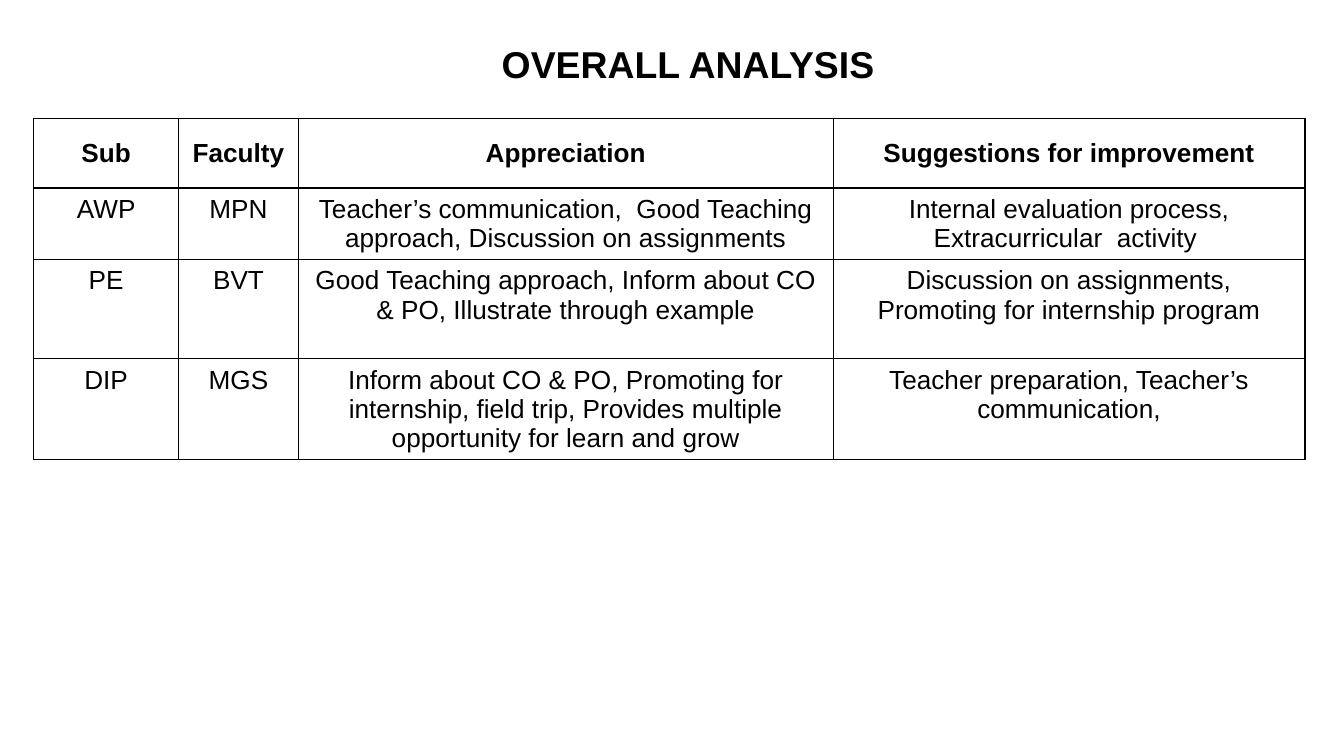
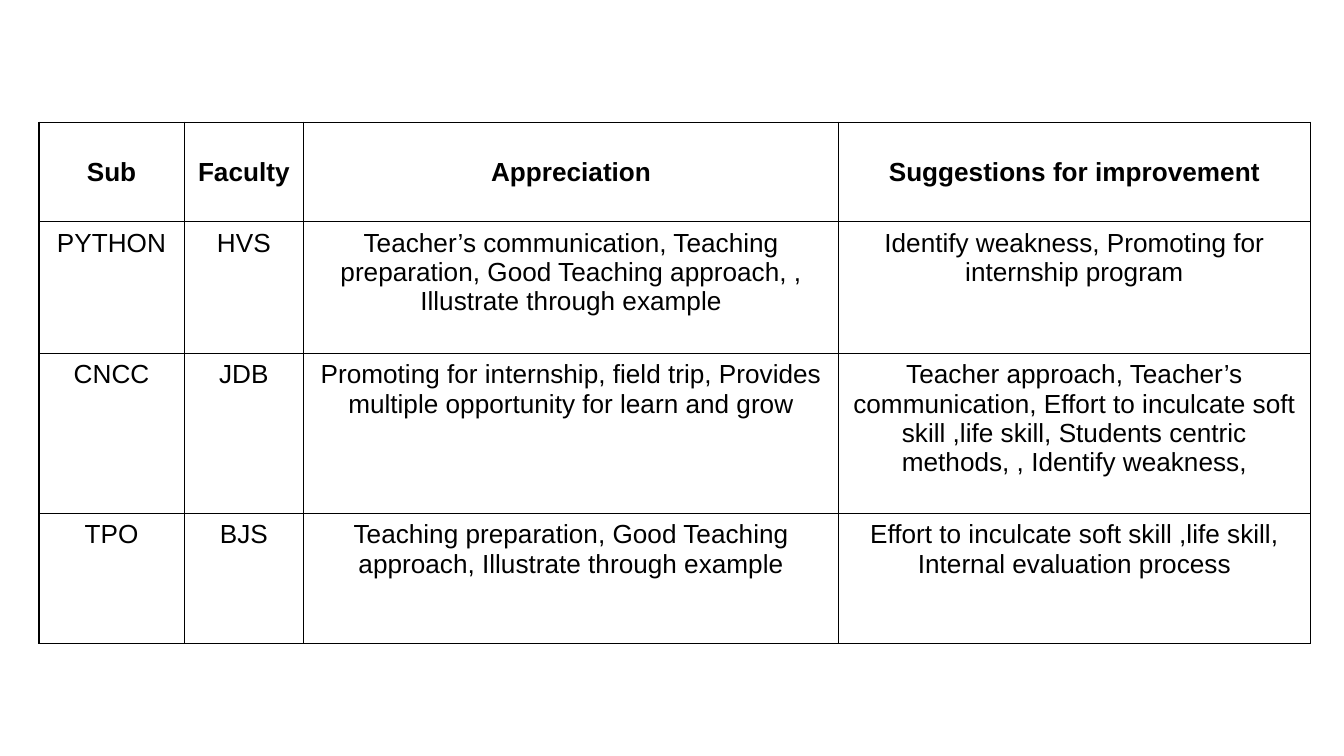
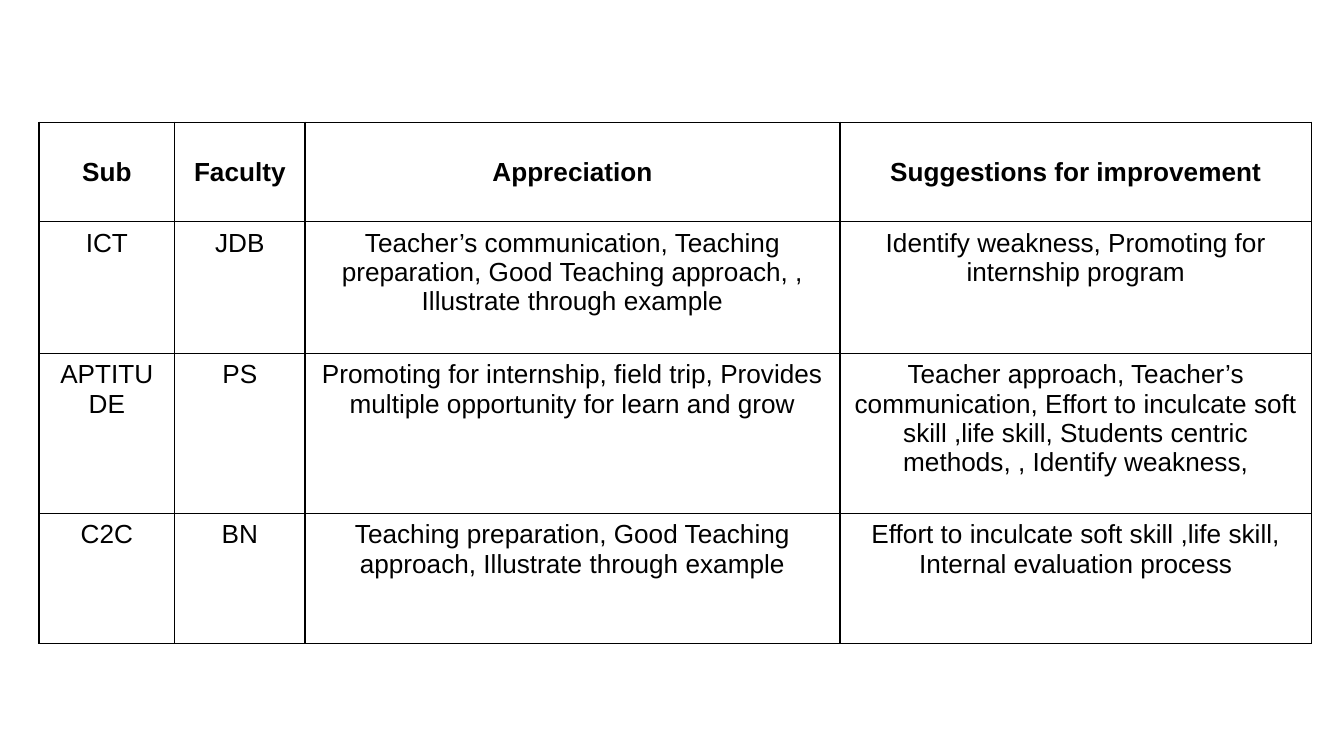
from lxml.etree import SubElement
from pptx import Presentation
from pptx.dml.color import RGBColor
from pptx.enum.text import MSO_ANCHOR as Anchor, PP_ALIGN as Align
from pptx.oxml.ns import qn
from pptx.util import Inches, Pt

BLACK = RGBColor(0x00, 0x00, 0x00)
WHITE = RGBColor(0xFF, 0xFF, 0xFF)
FONT = "Arial"
TITLE_SIZE, TABLE_SIZE = Pt(20), Pt(14)
BORDER_WIDTH = Pt(0.75)

HEADINGS = ("Sub", "Faculty", "Appreciation", "Suggestions for improvement")
REMARK_COLUMNS = (3.98, 3.51)

FIRST_ROWS = [
    ("AWP", "MPN",
     "Teacher’s communication,  Good Teaching approach, Discussion on assignments",
     "Internal evaluation process, Extracurricular  activity "),
    ("PE", "BVT",
     "Good Teaching approach, Inform about CO & PO, Illustrate through example",
     "Discussion on assignments, Promoting for internship program"),
    ("DIP", "MGS",
     "Inform about CO & PO, Promoting for internship, field trip, "
     "Provides multiple opportunity for learn and grow",
     "Teacher preparation, Teacher’s communication,"),
]

# Slides 2 and 3 give the same remarks for different subjects.
SHARED_REMARKS = [
    ("Teacher’s communication, Teaching preparation, Good Teaching approach, , "
     "Illustrate through example",
     "Identify weakness, Promoting for internship program"),
    ("Promoting for internship, field trip, Provides multiple opportunity for learn and grow",
     "Teacher approach, Teacher’s communication, Effort to inculcate soft skill ,life skill, "
     "Students centric methods, , Identify weakness,"),
    ("Teaching preparation, Good Teaching approach, Illustrate through example",
     "Effort to inculcate soft skill ,life skill, Internal evaluation process"),
]
SECOND_SUBJECTS = [("PYTHON", "HVS"), ("CNCC", "JDB"), ("TPO", "BJS")]
THIRD_SUBJECTS = [("ICT", "JDB"), ("APTITUDE", "PS"), ("C2C", "BN")]
SECOND_ROWS = [subject + remarks for subject, remarks in zip(SECOND_SUBJECTS, SHARED_REMARKS)]
THIRD_ROWS = [subject + remarks for subject, remarks in zip(THIRD_SUBJECTS, SHARED_REMARKS)]

TALL_ROWS = (0.74, 0.98, 1.19, 0.97)

# title, table left and top, first two column widths, row heights, body rows
PAGES = [
    ("OVERALL ANALYSIS", (0.25, 0.88), (1.08, 0.89), (0.52, 0.53, 0.74, 0.74), FIRST_ROWS),
    (None, (0.29, 0.91), (1.08, 0.89), TALL_ROWS, SECOND_ROWS),
    (None, (0.29, 0.91), (1.01, 0.97), TALL_ROWS, THIRD_ROWS),
]


def write(frame, text, size, bold):
    """Put one centred paragraph into a text frame."""
    frame.text = text
    para = frame.paragraphs[0]
    para.alignment = Align.CENTER
    font = para.runs[0].font
    font.name, font.size, font.bold = FONT, size, bold
    font.color.rgb = BLACK


def add_borders(cell):
    properties = cell._tc.get_or_add_tcPr()
    for position, side in enumerate(("a:lnL", "a:lnR", "a:lnT", "a:lnB")):
        line = SubElement(properties, qn(side), w=str(BORDER_WIDTH))
        fill = SubElement(line, qn("a:solidFill"))
        SubElement(fill, qn("a:srgbClr"), val=str(BLACK))
        properties.insert(position, line)


deck = Presentation()
deck.slide_width = Inches(10)
deck.slide_height = deck.slide_width * 9 // 16

for title, (left, top), subject_columns, heights, body in PAGES:
    page = deck.slides.add_slide(deck.slide_layouts[6])

    if title:
        box = page.shapes.add_textbox(Inches(0.46), Inches(0.21), Inches(9.32), Inches(0.45))
        frame = box.text_frame
        frame.word_wrap = True
        frame.margin_left = frame.margin_right = Inches(0.1)
        frame.margin_top = frame.margin_bottom = Inches(0.1)
        write(frame, title, TITLE_SIZE, True)

    widths = subject_columns + REMARK_COLUMNS
    table = page.shapes.add_table(
        len(heights), len(widths), Inches(left), Inches(top),
        Inches(sum(widths)), Inches(sum(heights))).table
    table.horz_banding = False
    for column, width in zip(table.columns, widths):
        column.width = Inches(width)
    for row, height in zip(table.rows, heights):
        row.height = Inches(height)

    for row_number, texts in enumerate([HEADINGS] + body):
        is_heading = row_number == 0
        for column_number, text in enumerate(texts):
            cell = table.cell(row_number, column_number)
            write(cell.text_frame, text, TABLE_SIZE, is_heading)
            cell.vertical_anchor = Anchor.MIDDLE if is_heading else Anchor.TOP
            if not is_heading:
                cell.margin_bottom = 0
            cell.fill.solid()
            cell.fill.fore_color.rgb = WHITE
            add_borders(cell)

deck.save("out.pptx")
